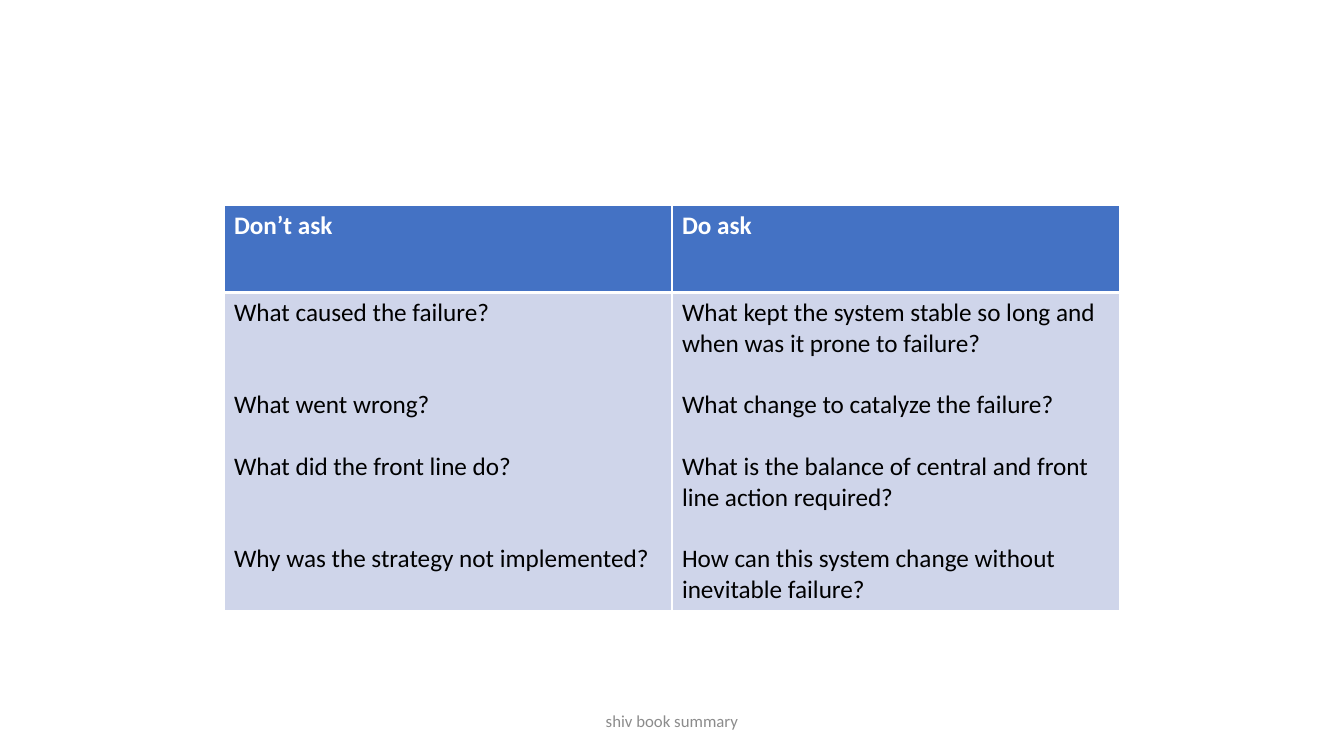
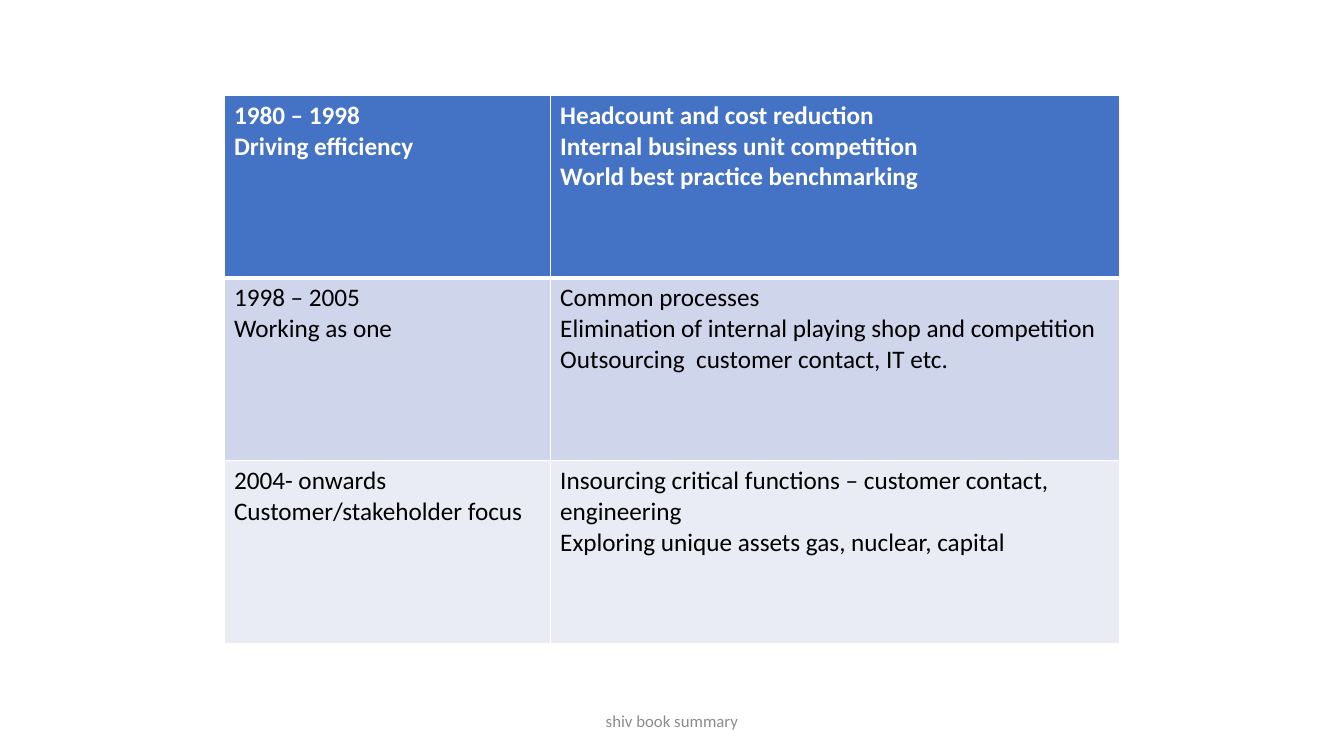
from dataclasses import dataclass

from lxml import etree
from pptx import Presentation
from pptx.dml.color import RGBColor
from pptx.enum.text import MSO_ANCHOR, PP_ALIGN
from pptx.oxml.ns import qn
from pptx.util import Pt

CENTER = PP_ALIGN.CENTER
MIDDLE = MSO_ANCHOR.MIDDLE
BLANK_LAYOUT = 6


@dataclass(frozen=True)
class Theme:
    font: str = "Calibri"
    header_fill: str = "4472C4"
    band_fills: tuple = ("CFD5EA", "E9EBF5")
    header_text: str = "FFFFFF"
    body_text: str = "000000"
    footer_text: str = "8C8C8C"
    border: str = "FFFFFF"
    thin_border: float = 1
    header_border: float = 3
    table_size: float = 18
    line_height: float = 22
    footer_size: float = 12


class Deck:
    def __init__(self, theme):
        self.theme = theme
        self.presentation = Presentation()
        self.presentation.slide_width = Pt(960)
        self.presentation.slide_height = Pt(540)
        self.slide = None

    def add_slide(self, footer):
        layout = self.presentation.slide_layouts[BLANK_LAYOUT]
        self.slide = self.presentation.slides.add_slide(layout)
        self.add_footer(footer)

    def format_paragraph(self, paragraph, size, color, bold=False):
        for run in paragraph.runs:
            run.font.name = self.theme.font
            run.font.size = Pt(size)
            run.font.bold = bold
            run.font.color.rgb = RGBColor.from_string(color)

    def add_footer(self, text):
        shape = self.slide.shapes.add_textbox(Pt(318), Pt(500.5), Pt(324), Pt(28.75))
        text_frame = shape.text_frame
        text_frame.word_wrap = True
        text_frame.vertical_anchor = MIDDLE
        text_frame.text = text
        paragraph = text_frame.paragraphs[0]
        paragraph.alignment = CENTER
        self.format_paragraph(paragraph, self.theme.footer_size, self.theme.footer_text)

    def add_table(self, top, column_widths, row_heights, rows):
        table = self.slide.shapes.add_table(
            len(rows), len(column_widths), Pt(160), Pt(top),
            Pt(sum(column_widths)), Pt(sum(row_heights))).table
        for column, width in zip(table.columns, column_widths):
            column.width = Pt(width)
        for row, height in zip(table.rows, row_heights):
            row.height = Pt(height)
        for row_index, contents in enumerate(rows):
            for column_index, lines in enumerate(contents):
                self.fill_cell(table.cell(row_index, column_index), row_index, lines)

    def fill_cell(self, cell, row_index, lines):
        theme = self.theme
        is_header = row_index == 0
        self.set_borders(cell, row_index)
        bands = theme.band_fills
        fill = theme.header_fill if is_header else bands[(row_index - 1) % len(bands)]
        cell.fill.solid()
        cell.fill.fore_color.rgb = RGBColor.from_string(fill)
        cell.text_frame.text = "\n".join(text for text, _ in lines)
        color = theme.header_text if is_header else theme.body_text
        for paragraph, (_, gap_lines) in zip(cell.text_frame.paragraphs, lines):
            paragraph.space_before = Pt(gap_lines * theme.line_height)
            self.format_paragraph(paragraph, theme.table_size, color, is_header)

    def set_borders(self, cell, row_index):
        theme = self.theme
        widths = dict.fromkeys(("lnL", "lnR", "lnT", "lnB"), theme.thin_border)
        if row_index == 0:
            widths["lnB"] = theme.header_border
        elif row_index == 1:
            widths["lnT"] = theme.header_border
        properties = cell._tc.get_or_add_tcPr()
        for side, width in widths.items():
            line = etree.SubElement(properties, qn(f"a:{side}"), w=str(Pt(width)))
            fill = etree.SubElement(line, qn("a:solidFill"))
            etree.SubElement(fill, qn("a:srgbClr"), val=theme.border)


def spaced(*lines, gaps=None):
    return list(zip(lines, gaps or [0] * len(lines)))


def main():
    deck = Deck(Theme())
    footer = "shiv book summary"

    deck.add_slide(footer)
    deck.add_table(147, [320, 320], [62, 227], [
        [spaced("Don’t ask"), spaced("Do ask")],
        [
            spaced("What caused the failure?",
                   "What went wrong?",
                   "What did the front line do?",
                   "Why was the strategy not implemented?",
                   gaps=[0, 2, 1, 2]),
            spaced("What kept the system stable so long and when was it prone to failure?",
                   "What change to catalyze the failure?",
                   "What is the balance of central and front line action required?",
                   "How can this system change without inevitable failure?",
                   gaps=[0, 1, 1, 1]),
        ],
    ])

    deck.add_slide(footer)
    deck.add_table(68, [233, 407], [130.5] * 3, [
        [
            spaced("1980 – 1998", "Driving efficiency"),
            spaced("Headcount and cost reduction",
                   "Internal business unit competition",
                   "World best practice benchmarking"),
        ],
        [
            spaced("1998 – 2005", "Working as one"),
            spaced("Common processes",
                   "Elimination of internal playing shop and competition",
                   "Outsourcing  customer contact, IT etc."),
        ],
        [
            spaced("2004- onwards", "Customer/stakeholder focus"),
            spaced("Insourcing critical functions – customer contact, engineering",
                   "Exploring unique assets gas, nuclear, capital"),
        ],
    ])

    deck.presentation.save("out.pptx")


if __name__ == "__main__":
    main()
